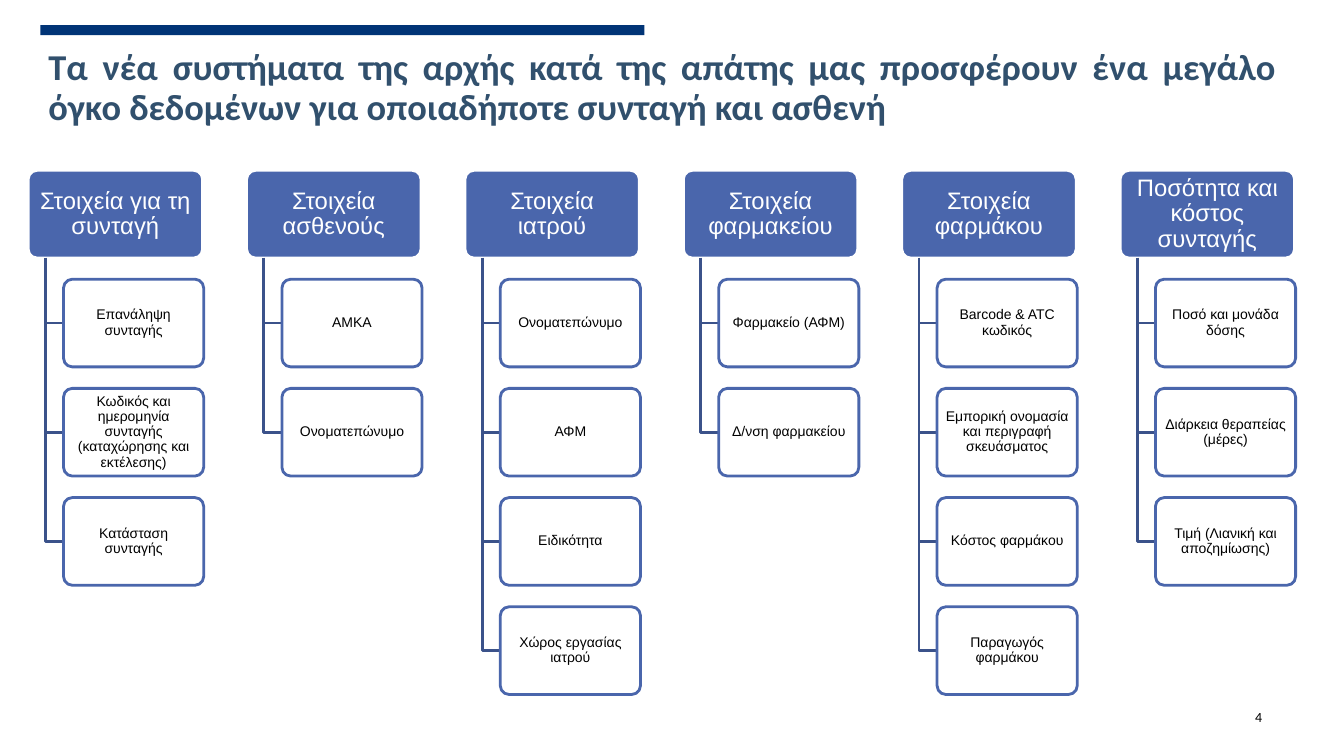
import pptx
import pptx.dml.color
import pptx.enum.shapes
import pptx.enum.text
import pptx.oxml
import pptx.oxml.ns
import pptx.util

Inches = pptx.util.Inches
Pt = pptx.util.Pt
RGBColor = pptx.dml.color.RGBColor
SHAPE = pptx.enum.shapes.MSO_SHAPE
ANCHOR = pptx.enum.text.MSO_ANCHOR
ALIGN = pptx.enum.text.PP_ALIGN

NAVY = RGBColor(0x01, 0x34, 0x76)
TITLE_BLUE = RGBColor(0x31, 0x50, 0x6D)
HEADER_BLUE = RGBColor(0x4A, 0x66, 0xAC)
BRANCH_BLUE = RGBColor(0x3B, 0x52, 0x8A)
WHITE = RGBColor(0xFF, 0xFF, 0xFF)
BLACK = RGBColor(0x00, 0x00, 0x00)

TITLE = ("Τα νέα συστήματα της αρχής κατά της απάτης μας προσφέρουν ένα μεγάλο "
         "όγκο δεδομένων για οποιαδήποτε συνταγή και ασθενή")
DATA_GROUPS = [
    ("Στοιχεία για τη συνταγή", [
        "Επανάληψη συνταγής",
        "Κωδικός και ημερομηνία συνταγής (καταχώρησης και εκτέλεσης)",
        "Κατάσταση συνταγής"]),
    ("Στοιχεία ασθενούς", ["ΑΜΚΑ", "Ονοματεπώνυμο"]),
    ("Στοιχεία ιατρού", [
        "Ονοματεπώνυμο", "ΑΦΜ", "Ειδικότητα", "Χώρος εργασίας ιατρού"]),
    ("Στοιχεία φαρμακείου", ["Φαρμακείο (ΑΦΜ)", "Δ/νση φαρμακείου"]),
    ("Στοιχεία φαρμάκου", [
        "Barcode & ATC κωδικός",
        "Εμπορική ονομασία και περιγραφή σκευάσματος",
        "Κόστος φαρμάκου",
        "Παραγωγός φαρμάκου"]),
    ("Ποσότητα και κόστος συνταγής", [
        "Ποσό και μονάδα δόσης",
        "Διάρκεια θεραπείας (μέρες)",
        "Τιμή (Λιανική και αποζημίωσης)"]),
]

GROUP_LEFT = Inches(0.28)
GROUP_PITCH = Inches(10.83 / 5)
HEADER_TOP = Inches(1.69)
HEADER_WIDTH = Inches(1.73)
BOX_HEIGHT = Inches(0.87)
HEADER_BOTTOM = HEADER_TOP + BOX_HEIGHT
TRUNK_INDENT = Inches(0.17)
ITEM_INDENT = Inches(0.35)
ITEM_TOP = Inches(2.77)
ITEM_WIDTH = Inches(1.39)
ITEM_PITCH = Inches(3.25 / 3)


def set_text(shape, text, size, color, font, insets, anchor, align,
             bold=False, line_spacing=1.0):
    """Insets are left, top, right and bottom in inches."""
    frame = shape.text_frame
    frame.text = text
    frame.word_wrap = True
    frame.auto_size = pptx.enum.text.MSO_AUTO_SIZE.NONE
    frame.vertical_anchor = anchor
    (frame.margin_left, frame.margin_top,
     frame.margin_right, frame.margin_bottom) = map(Inches, insets)
    paragraph = frame.paragraphs[0]
    paragraph.alignment = align
    paragraph.line_spacing = line_spacing
    paragraph.space_before = Pt(0)
    run_font = paragraph.runs[0].font
    run_font.name = font
    run_font.size = Pt(size)
    run_font.bold = bold
    run_font.color.rgb = color


def add_title(slide):
    title = slide.shapes.title
    title.left, title.top = Inches(0.36), Inches(0.44)
    title.width, title.height = Inches(12.41), Inches(0.91)
    set_text(title, TITLE, 26, TITLE_BLUE, "Calibri", (0.12, 0.05, 0.1, 0.05),
             ANCHOR.TOP, ALIGN.JUSTIFY, bold=True, line_spacing=0.9)


def add_accent_bar(slide):
    bar = slide.shapes.add_shape(
        SHAPE.RECTANGLE, Inches(0.4), Inches(0.25), Inches(5.99), Inches(0.1))
    bar.shadow.inherit = False
    bar.fill.solid()
    bar.fill.fore_color.rgb = NAVY
    bar.line.fill.background()


def add_page_number(slide):
    number = slide.shapes.add_textbox(
        Inches(12.35), Inches(6.97), Inches(0.57), Inches(0.28))
    set_text(number, "4", 10, BLACK, "Calibri", (0.1, 0.1, 0.1, 0.1),
             ANCHOR.MIDDLE, ALIGN.LEFT)


def add_box(slide, left, top, width, fill, outline, text, size, color, insets):
    box = slide.shapes.add_shape(
        SHAPE.ROUNDED_RECTANGLE, left, top, width, BOX_HEIGHT)
    box.adjustments[0] = 0.1
    box.shadow.inherit = False
    box.fill.solid()
    box.fill.fore_color.rgb = fill
    box.line.color.rgb = outline
    box.line.width = Pt(2)
    set_text(box, text, size, color, "Arial", insets,
             ANCHOR.MIDDLE, ALIGN.CENTER, line_spacing=0.9)
    return box


def make_translucent(shape, percent_opaque):
    color = shape.fill._xPr.find(".//" + pptx.oxml.ns.qn("a:srgbClr"))
    alpha = pptx.oxml.parse_xml(
        f'<a:alpha {pptx.oxml.ns.nsdecls("a")} val="{percent_opaque * 1000}"/>')
    color.append(alpha)


def add_branch(slide, trunk_x, item_x, item_middle):
    """Draw the elbow from a header's bottom edge to the side of an item."""
    builder = slide.shapes.build_freeform(trunk_x, HEADER_BOTTOM)
    builder.add_line_segments(
        [(trunk_x, item_middle), (item_x, item_middle)], close=False)
    branch = builder.convert_to_shape()
    branch.shadow.inherit = False
    branch.fill.background()
    branch.line.color.rgb = BRANCH_BLUE
    branch.line.width = Pt(2)


def add_group(slide, left, heading, items):
    add_box(slide, left, HEADER_TOP, HEADER_WIDTH, HEADER_BLUE, WHITE,
            heading, 17, WHITE, (0.06, 0.04, 0.06, 0.04))
    item_x = left + ITEM_INDENT
    for row, item in enumerate(items):
        top = ITEM_TOP + row * ITEM_PITCH
        add_branch(slide, left + TRUNK_INDENT, item_x, top + BOX_HEIGHT // 2)
        card = add_box(slide, item_x, top, ITEM_WIDTH, WHITE, HEADER_BLUE,
                       item, 10, BLACK, (0.04, 0.03, 0.04, 0.03))
        make_translucent(card, 90)


def main():
    presentation = pptx.Presentation()
    presentation.slide_width = Inches(13.33)
    presentation.slide_height = Inches(7.5)
    slide = presentation.slides.add_slide(presentation.slide_layouts[5])
    add_accent_bar(slide)
    add_title(slide)
    add_page_number(slide)
    for column, (heading, items) in enumerate(DATA_GROUPS):
        add_group(slide, GROUP_LEFT + column * GROUP_PITCH, heading, items)
    presentation.save("out.pptx")


if __name__ == "__main__":
    main()
